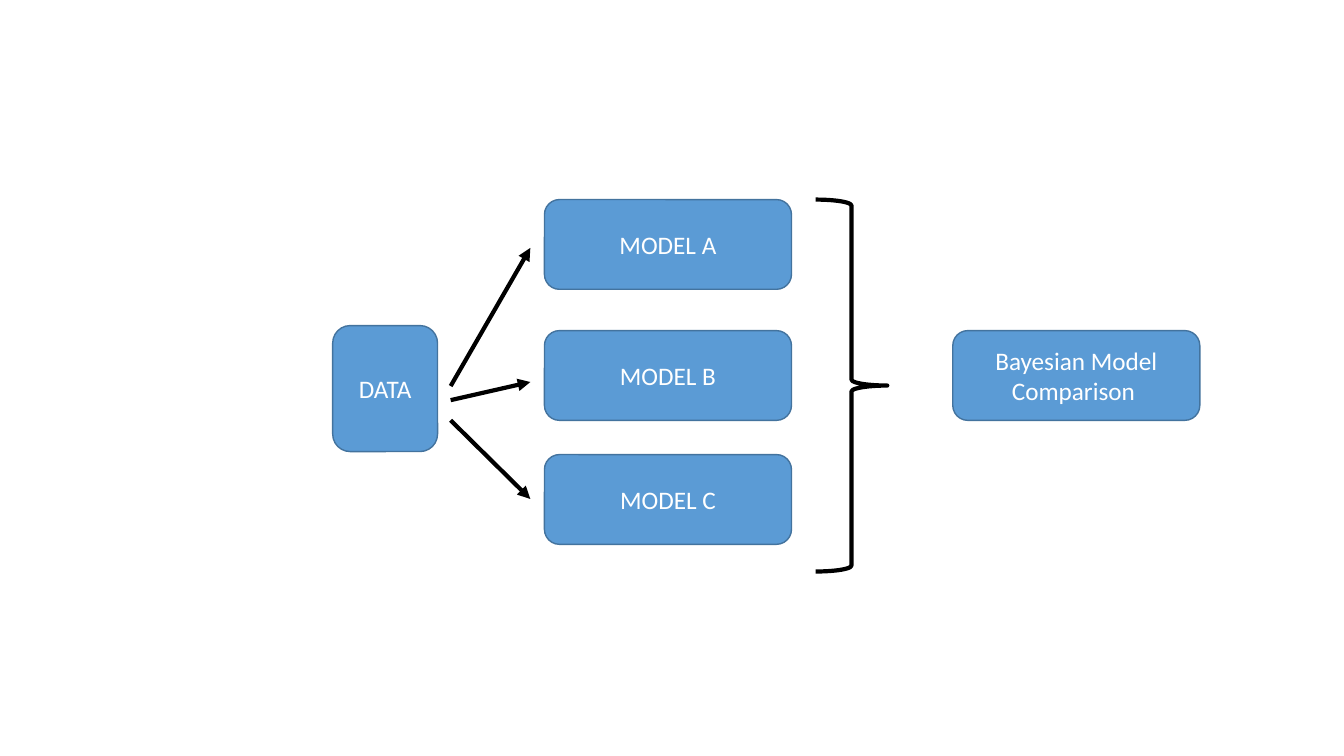
from pptx import Presentation
from pptx.dml.color import RGBColor
from pptx.enum.shapes import MSO_CONNECTOR as Connector, MSO_SHAPE as Shape
from pptx.enum.text import MSO_ANCHOR as Anchor, PP_ALIGN as Align
from pptx.oxml.ns import qn
from pptx.util import Pt
from lxml.etree import SubElement

EMU_PER_PX = 9144  # 100 px to the inch
BLUE, BORDER, WHITE, BLACK = "5B9BD5", "43739E", "FFFFFF", "000000"


def px(length):
    return length * EMU_PER_PX


def color(hex_string):
    return RGBColor.from_string(hex_string)


def set_line(shape, hex_string, width):
    shape.line.color.rgb = color(hex_string)
    shape.line.width = Pt(width)


def add_box(shapes, text, left, top, width, height):
    box = shapes.add_shape(Shape.ROUNDED_RECTANGLE,
                           px(left), px(top), px(width), px(height))
    box.shadow.inherit = False
    box.fill.solid()
    box.fill.fore_color.rgb = color(BLUE)
    set_line(box, BORDER, 1)
    text_frame = box.text_frame
    text_frame.word_wrap = True
    text_frame.vertical_anchor = Anchor.MIDDLE
    text_frame.text = text
    paragraph = text_frame.paragraphs[0]
    paragraph.alignment = Align.CENTER
    font = paragraph.runs[0].font
    font.name, font.size = "Calibri", Pt(18)
    font.color.rgb = color(WHITE)


def add_arrow(shapes, start, end):
    arrow = shapes.add_connector(Connector.STRAIGHT, *map(px, start + end))
    set_line(arrow, BLACK, 3)
    SubElement(arrow.line._get_or_add_ln(), qn("a:tailEnd"), type="triangle")
    SubElement(arrow._element.spPr, qn("a:effectLst"))


def add_brace(shapes, left, top, width, height):
    brace = shapes.add_shape(Shape.RIGHT_BRACE,
                             px(left), px(top), px(width), px(height))
    brace.shadow.inherit = False
    brace.fill.background()
    set_line(brace, BLACK, 3)


def add_comparison_diagram(slide, left, top):
    shapes = slide.shapes.add_group_shape().shapes
    model_left, model_width, model_height = left + 210, 245, 89

    # Data and the models it feeds: offsets of box, arrow start, arrow end
    add_box(shapes, "DATA", left, top + 125, 104, 125)
    models = [("MODEL A", 0, 185, 48),
              ("MODEL B", 130, 199, 181),
              ("MODEL C", 253, 219, 297)]
    for name, box_y, start_y, end_y in models:
        add_box(shapes, name, model_left, top + box_y, model_width, model_height)
        add_arrow(shapes, (left + 117, top + start_y),
                  (model_left - 14, top + end_y))

    # Brace gathering the models into the comparison
    add_brace(shapes, model_left + model_width + 24, top, 71, 369)
    add_box(shapes, "Bayesian Model Comparison ", left + 615, top + 130,
            model_width, model_height)


def main():
    presentation = Presentation()
    presentation.slide_width, presentation.slide_height = px(1333), px(750)
    slide = presentation.slides.add_slide(presentation.slide_layouts[6])
    add_comparison_diagram(slide, 330, 198)
    presentation.save("out.pptx")


if __name__ == "__main__":
    main()
